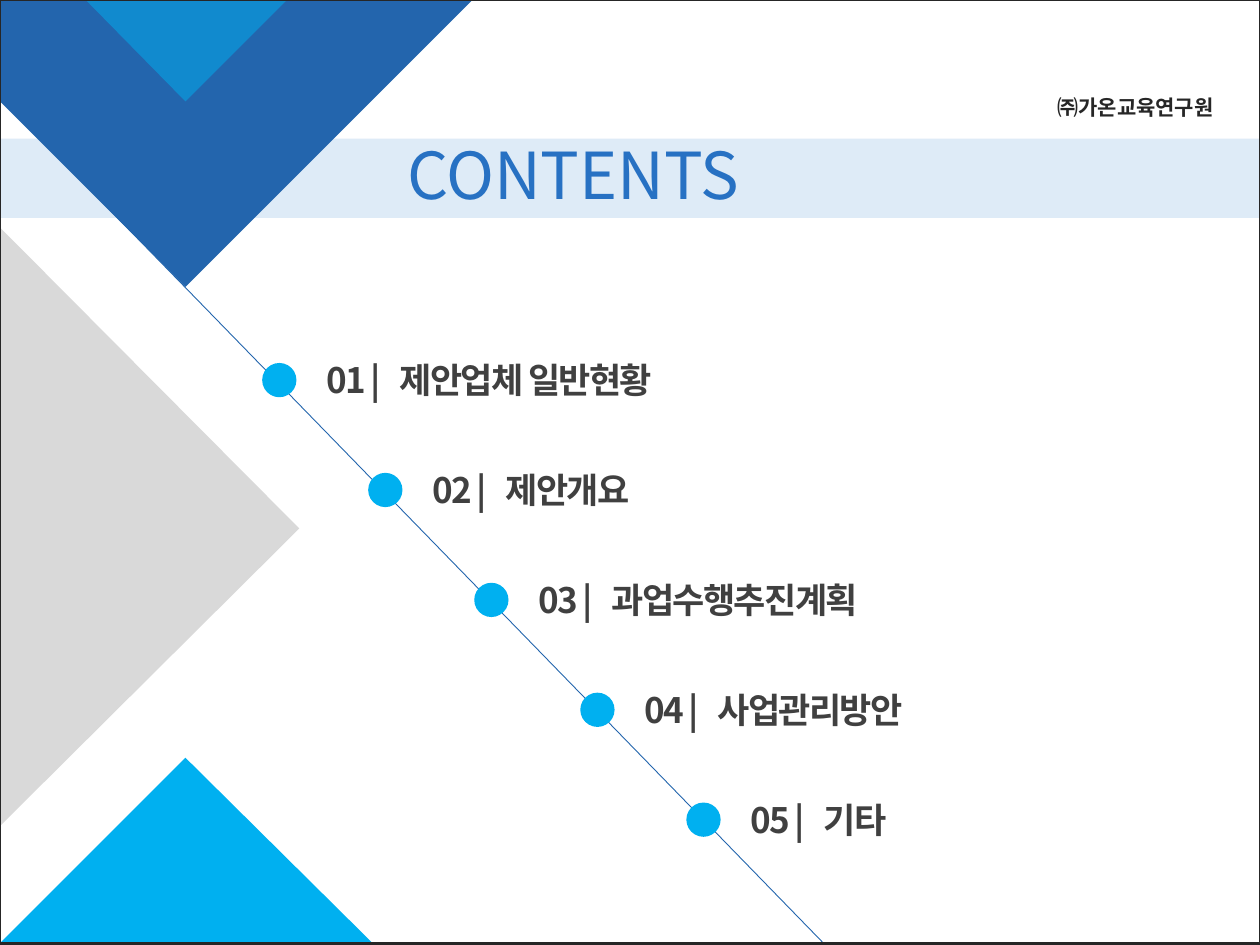
import pptx
import pptx.dml.color
import pptx.enum.shapes
import pptx.enum.text
import pptx.oxml.ns
import pptx.util
from lxml import etree

Pt = pptx.util.Pt
qn = pptx.oxml.ns.qn
KIND = pptx.enum.shapes.MSO_SHAPE
ALIGN = pptx.enum.text.PP_ALIGN
FACE = "Noto Sans CJK KR"


def paint(shape, fill=None, line=None, width=0, alpha=100):
    """Set fill and outline from hex strings; None means no paint."""
    shape.shadow.inherit = False
    for part, tint in ((shape.fill, fill), (shape.line.fill, line)):
        if tint is None:
            part.background()
        else:
            part.solid()
            part.fore_color.rgb = pptx.dml.color.RGBColor.from_string(tint)
    if line:
        shape.line.width = Pt(width)
    if alpha < 100:
        clr = shape.fill._xPr.find(qn("a:solidFill"))[0]
        etree.SubElement(clr, qn("a:alpha"), val=str(alpha * 1000))


def write(shape, box, text, tint, size, bold=False, align=ALIGN.LEFT):
    """Place a text shape and fill it with one formatted run."""
    for name, val in zip(("left", "top", "width", "height"), box):
        setattr(shape, name, Pt(val))
    frame = shape.text_frame
    look = {"word_wrap": True,
            "auto_size": pptx.enum.text.MSO_AUTO_SIZE.SHAPE_TO_FIT_TEXT,
            "vertical_anchor": pptx.enum.text.MSO_ANCHOR.TOP}
    for name, val in look.items():
        setattr(frame, name, val)
    para = frame.paragraphs[0]
    para.alignment = align
    run = para.add_run()
    run.text = text
    for name, val in {"name": FACE, "size": Pt(size), "bold": bold}.items():
        setattr(run.font, name, val)
    run.font.color.rgb = pptx.dml.color.RGBColor.from_string(tint)
    etree.SubElement(run.font._element, qn("a:ea"), typeface=FACE)
    return para


deck = pptx.Presentation()
deck.slide_width, deck.slide_height = Pt(720), Pt(540)
slide = deck.slides.add_slide(deck.slide_layouts[5])
shapes = slide.shapes

# Band and corner triangles
band = shapes.add_shape(KIND.RECTANGLE, 0, Pt(79.2), Pt(720), Pt(45.4))
paint(band, "DEEBF7")

wedges = [
    ("2365AD", 100, [(0, 0), (270.4, 0), (106.4, 164), (0, 57.6)]),
    ("D9D9D9", 100, [(0, 130.5), (171, 301.5), (0, 472.5)]),
    ("00B0F0", 100, [(106.4, 432.7), (213, 539.3), (0, 539.3)]),
    ("00B0F0", 50, [(49, 0), (164, 0), (106.4, 57.6)]),
]
for tint, alpha, points in wedges:
    form = shapes.build_freeform(*points[0], scale=Pt(1))
    form.add_line_segments(points[1:], close=True)
    paint(form.convert_to_shape(), tint, alpha=alpha)

# Title, raised above the band
title = shapes.title
shapes._spTree.append(title._element)
write(title, (225.4, 73.4, 270, 51.8), "CONTENTS", "2771C3", 37)

# Diagonal line with the contents along it
diag = shapes.add_connector(pptx.enum.shapes.MSO_CONNECTOR.STRAIGHT,
                            Pt(0.7), Pt(56.2), Pt(470.9), Pt(539.3))
diag.line.color.rgb = pptx.dml.color.RGBColor.from_string("2365AD")
diag.line.width = Pt(0.5)
etree.SubElement(diag._element.spPr, qn("a:effectLst"))

items = ["제안업체 일반현황", "제안개요", "과업수행추진계획", "사업관리방안", "기타"]
for i, item in enumerate(items):
    x, y = 149.8 + 60.6 * i, 207.4 + 62.8 * i
    dot = shapes.add_shape(KIND.OVAL, Pt(x), Pt(y), Pt(19.6), Pt(19.6))
    paint(dot, "00B0F0")
    label = shapes.add_textbox(0, 0, 0, 0)
    para = write(label, (x + 29.5, y - 5.8, 228.2, 31.7),
                 f"{i + 1:02} |\t{item}", "404040", 20, True)
    para.runs[0].font._element.set("spc", "-100")
    tabs = etree.SubElement(para._p.get_or_add_pPr(), qn("a:tabLst"))
    etree.SubElement(tabs, qn("a:tab"), pos=str(Pt(42)), algn="l")

# Company name and slide frame
firm = shapes.add_textbox(0, 0, 0, 0)
write(firm, (430.6, 50.4, 270, 21.6), "㈜가온교육연구원", "262626", 12, True,
      ALIGN.RIGHT)
frame = shapes.add_shape(KIND.RECTANGLE, 0, 0, Pt(720), Pt(539.3))
paint(frame, line="262626", width=1.5)

deck.save("out.pptx")
